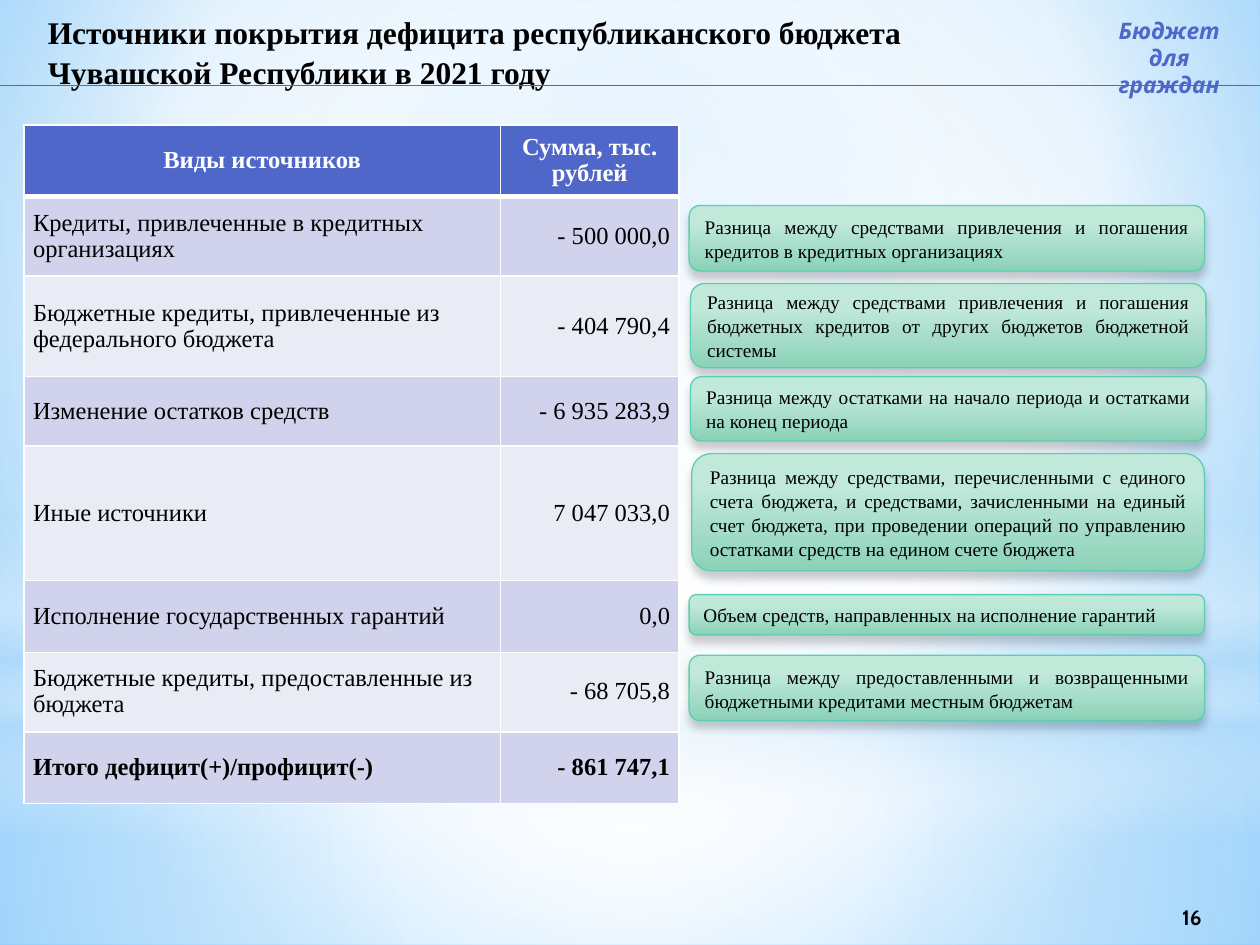
from pptx import Presentation
from pptx.dml.color import RGBColor
from pptx.enum.shapes import MSO_CONNECTOR, MSO_SHAPE
from pptx.enum.text import MSO_ANCHOR as Anchor, PP_ALIGN as Align
from pptx.oxml import parse_xml
from pptx.oxml.ns import nsdecls, qn
from pptx.util import Pt

SERIF, SANS = "Times New Roman", "Cabin"
BLACK, WHITE, BLUE, GREEN = "000000", "FFFFFF", "4E67C8", "5DCEAF"
BANDS = ("E9EBF5", "D0D3EB")

TITLE = "Источники покрытия дефицита республиканского бюджета Чувашской Республики в 2021 году"
MOTTO = "Бюджет\nдля граждан"
PAGE_NUMBER = "16"

# Table: row height, source, amount
COLUMN_WIDTHS = (272.2, 102.2)
ROWS = [
    (41, "Виды источников", "Сумма, тыс. рублей"),
    (45.4, "Кредиты, привлеченные в кредитных организациях", "- 500 000,0"),
    (57.6, "Бюджетные кредиты, привлеченные из федерального бюджета", "- 404 790,4"),
    (39.6, "Изменение остатков средств", "- 6 935 283,9"),
    (77, "Иные источники", "7 047 033,0"),
    (41, "Исполнение государственных гарантий", "0,0"),
    (45.4, "Бюджетные кредиты, предоставленные из бюджета", "- 68 705,8"),
    (41, "Итого дефицит(+)/профицит(-)", "- 861 747,1"),
]

# Explanations: left, top, width, height, text
CALLOUTS = [
    (393.8, 117.4, 294.5, 37.4,
     "Разница между средствами привлечения и погашения кредитов в кредитных организациях"),
    (394.6, 162, 294.5, 48.2,
     "Разница между средствами привлечения и погашения бюджетных кредитов от других "
     "бюджетов бюджетной системы"),
    (394.6, 215.3, 294.5, 36.7,
     "Разница между остатками на начало периода и остатками на конец периода"),
    (395.3, 259.2, 293, 67,
     "Разница между средствами, перечисленными с единого счета бюджета, и средствами, "
     "зачисленными на единый счет бюджета, при проведении операций по управлению "
     "остатками средств на едином счете бюджета"),
    (393.8, 339.8, 294.5, 23, "Объем средств, направленных на исполнение гарантий"),
    (393.8, 374.4, 294.5, 37.4,
     "Разница между предоставленными и возвращенными бюджетными кредитами местным бюджетам"),
]

# Gradients: stops as (position, colour, opacity); circle as left, top, right, bottom
CENTRE = (50, 50, 50, 50)
BACKGROUND_STOPS = [(0, "9ED5FF", 100), (60, WHITE, 100), (100, "5BB9FF", 100)]
CALLOUT_STOPS = [(28, "C0E9DA", 100), (100, "8CD1B8", 100)]
BACKDROP = [
    (MSO_SHAPE.RECTANGLE, 401.8, 138.2, CENTRE,
     [(0, WHITE, 91), (37, WHITE, 76), (100, "B4DCFA", 79)]),
    (MSO_SHAPE.RECTANGLE, 0, 401.8, CENTRE,
     [(0, WHITE, 89), (48, WHITE, 62), (100, "B4DCFA", 79)]),
    (MSO_SHAPE.RECTANGLE, 296.6, 180, None,
     [(0, WHITE, 0), (29, WHITE, 30), (45, "B4DCFA", 40), (55, WHITE, 26),
      (65, "B4DCFA", 60), (100, WHITE, 0)]),
    (MSO_SHAPE.OVAL, 126, 401.8, CENTRE, [(0, WHITE, 100), (56, WHITE, 0)]),
]


def rgb(value):
    return RGBColor.from_string(value)


def set_gradient(fill, properties, stops, circle=None):
    """Vertical gradient, or a round one when a circle is given."""
    fill.solid()
    stop_xml = "".join(
        f'<a:gs pos="{position * 1000}"><a:srgbClr val="{color}">'
        f'<a:alpha val="{opacity * 1000}"/></a:srgbClr></a:gs>'
        for position, color, opacity in stops)
    direction = '<a:lin ang="5400000" scaled="0"/>'
    if circle:
        sides = " ".join(f'{side}="{value * 1000}"' for side, value in zip("ltrb", circle))
        direction = f'<a:path path="circle"><a:fillToRect {sides}/></a:path>'
    gradient = parse_xml(f'<a:gradFill {nsdecls("a")} rotWithShape="1"><a:gsLst>{stop_xml}'
                         f'</a:gsLst>{direction}</a:gradFill>')
    properties.replace(properties.find(qn("a:solidFill")), gradient)


def add_shadow(shape):
    shape.shadow.inherit = False
    shape.element.spPr.find(qn("a:effectLst")).append(parse_xml(
        f'<a:outerShdw {nsdecls("a")} blurRad="{Pt(5)}" dist="{Pt(4)}" dir="5400000" '
        'rotWithShape="0"><a:srgbClr val="000000"><a:alpha val="20000"/></a:srgbClr>'
        '</a:outerShdw>'))


def write(text_frame, text, size, font=SERIF, color=BLACK, align=Align.LEFT,
          bold=False, italic=False, spacing=None):
    text_frame.word_wrap = True
    text_frame.text = text
    for paragraph in text_frame.paragraphs:
        paragraph.alignment = align
        paragraph.line_spacing = spacing
        for run in paragraph.runs:
            run.font.name, run.font.size = font, Pt(size)
            run.font.bold, run.font.italic = bold, italic
            run.font.color.rgb = rgb(color)


def add_text(slide, box, text, size, anchor=Anchor.TOP, **style):
    text_frame = slide.shapes.add_textbox(*map(Pt, box)).text_frame
    text_frame.vertical_anchor = anchor
    write(text_frame, text, size, **style)


def set_borders(cell, top, bottom):
    properties = cell._tc.get_or_add_tcPr()
    for side, width in (("L", 1), ("R", 1), ("T", top), ("B", bottom)):
        properties.append(parse_xml(
            f'<a:ln{side} {nsdecls("a")} w="{Pt(width)}"><a:solidFill>'
            f'<a:srgbClr val="{WHITE}"/></a:solidFill></a:ln{side}>'))


def add_sources_table(slide):
    table = slide.shapes.add_table(
        len(ROWS), 2, Pt(13.7), Pt(71.3), Pt(sum(COLUMN_WIDTHS)),
        Pt(sum(row[0] for row in ROWS))).table
    for column, width in zip(table.columns, COLUMN_WIDTHS):
        column.width = Pt(width)
    for i, (height, *texts) in enumerate(ROWS):
        table.rows[i].height = Pt(height)
        header, total = i == 0, i == len(ROWS) - 1
        for j, text in enumerate(texts):
            cell = table.cell(i, j)
            set_borders(cell, top=3 if i == 1 else 1, bottom=3 if header else 1)
            cell.fill.solid()
            cell.fill.fore_color.rgb = rgb(BLUE if header else BANDS[i % 2])
            cell.vertical_anchor = Anchor.MIDDLE
            cell.margin_left = cell.margin_right = Pt(5.2)
            cell.margin_top = cell.margin_bottom = Pt(3.6)
            write(cell.text_frame, text, 14, color=WHITE if header else BLACK,
                  align=Align.CENTER if header else (Align.LEFT, Align.RIGHT)[j],
                  bold=header or total, spacing=0.96)


def main():
    presentation = Presentation()
    presentation.slide_width, presentation.slide_height = Pt(720), Pt(540)
    slide = presentation.slides.add_slide(presentation.slide_layouts[6])

    # Background and its soft light layers
    fill = slide.background.fill
    fill.solid()
    set_gradient(fill, slide.element.find(".//" + qn("p:bgPr")),
                 BACKGROUND_STOPS, (20, 10, 20, 60))
    for kind, top, height, circle, stops in BACKDROP:
        shape = slide.shapes.add_shape(kind, 0, Pt(top), Pt(720), Pt(height))
        shape.shadow.inherit = False
        shape.line.fill.background()
        set_gradient(shape.fill, shape.element.spPr, stops, circle)

    add_sources_table(slide)

    # Explanations beside the rows
    for *box, text in CALLOUTS:
        shape = slide.shapes.add_shape(MSO_SHAPE.ROUNDED_RECTANGLE, *map(Pt, box))
        set_gradient(shape.fill, shape.element.spPr, CALLOUT_STOPS)
        shape.line.color.rgb = rgb(GREEN)
        shape.line.width = Pt(0.75)
        add_shadow(shape)
        shape.text_frame.vertical_anchor = Anchor.MIDDLE
        write(shape.text_frame, text, 11, align=Align.JUSTIFY, spacing=1.04)

    # Title, rule, motto and page number
    add_text(slide, (20.2, 2.9, 560.9, 43.2), TITLE, 18, bold=True, spacing=1.05)
    rule = slide.shapes.add_connector(MSO_CONNECTOR.STRAIGHT, 0, Pt(49), Pt(720), Pt(49))
    rule.line.color.rgb = rgb(BLUE)
    rule.line.width = Pt(0.75)
    rule.element.spPr.append(parse_xml(f'<a:effectLst {nsdecls("a")}/>'))
    add_text(slide, (619.9, 5.8, 96.5, 38.9), MOTTO, 13, font=SANS, color=BLUE,
             align=Align.CENTER, bold=True, italic=True)
    add_text(slide, (641.5, 509.8, 79.2, 28.8), PAGE_NUMBER, 12, anchor=Anchor.MIDDLE,
             font=SANS, align=Align.CENTER, bold=True)

    presentation.save("out.pptx")


if __name__ == "__main__":
    main()
